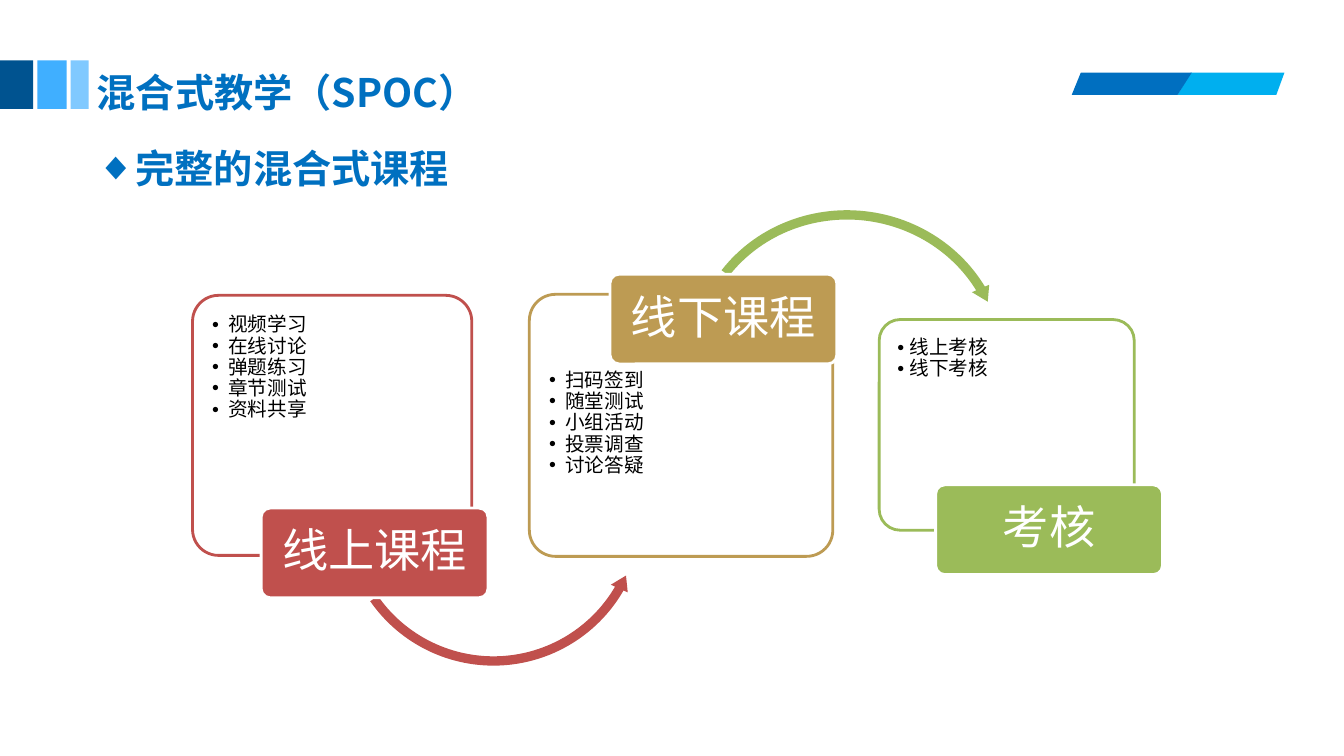
from lxml.etree import SubElement
from pptx import Presentation
from pptx.dml.color import RGBColor
from pptx.enum.shapes import MSO_SHAPE as Shape
from pptx.enum.text import MSO_ANCHOR as Anchor, MSO_AUTO_SIZE as AutoSize, PP_ALIGN as Align
from pptx.oxml.ns import qn
from pptx.util import Inches, Pt

FONT = "Noto Sans CJK SC"
WHITE = RGBColor(0xFF, 0xFF, 0xFF)
BLACK = RGBColor(0x00, 0x00, 0x00)
BLUE = RGBColor(0x00, 0x70, 0xC0)
BAND_BLUE = RGBColor(0x00, 0x6F, 0xC0)
BAND_CYAN = RGBColor(0x00, 0xAF, 0xEF)
NAVY = RGBColor(0x00, 0x53, 0x90)
SKY = RGBColor(0x40, 0xAF, 0xFF)
PALE = RGBColor(0x80, 0xC9, 0xFF)
RED = RGBColor(0xC0, 0x50, 0x4D)
GOLD = RGBColor(0xBD, 0x9B, 0x53)
GREEN = RGBColor(0x9B, 0xBB, 0x59)

HEADING = {"size": Pt(28), "bold": True}
LABEL = {"size": Pt(33), "bold": False}
ITEM = {"size": Pt(14), "bold": False}


class SlideBuilder:
    def __init__(self, slide):
        self.slide = slide

    def paint(self, shape, fill, line=None):
        shape.shadow.inherit = False
        shape.fill.solid()
        shape.fill.fore_color.rgb = fill
        if line is None:
            shape.line.fill.background()
        else:
            shape.line.color.rgb = line
            shape.line.width = Pt(2)

    def shape(self, kind, box, fill, line=None, adjustments=()):
        shape = self.slide.shapes.add_shape(kind, *map(Inches, box))
        self.paint(shape, fill, line)
        for index, value in enumerate(adjustments):
            shape.adjustments[index] = value
        return shape

    def band(self, points, fill):
        corners = [(Inches(x), Inches(y)) for x, y in points]
        builder = self.slide.shapes.build_freeform(*corners[0])
        builder.add_line_segments(corners[1:], close=True)
        self.paint(builder.convert_to_shape(), fill)

    def set_text(self, shape, lines, style, color, margins, anchor=Anchor.TOP,
                 align=Align.LEFT, spacing=1.0, bullet=None, indent=0):
        frame = shape.text_frame
        frame.text = "\n".join(lines)
        sides = ("margin_left", "margin_top", "margin_right", "margin_bottom")
        settings = dict(zip(sides, map(Inches, margins)))
        settings.update(word_wrap=True, auto_size=AutoSize.NONE, vertical_anchor=anchor)
        for name, value in settings.items():
            setattr(frame, name, value)
        for paragraph in frame.paragraphs:
            layout = {"alignment": align, "line_spacing": spacing,
                      "space_before": Pt(0), "space_after": Pt(0)}
            for name, value in layout.items():
                setattr(paragraph, name, value)
            if bullet:
                self.add_bullet(paragraph, bullet, indent)
            font = paragraph.runs[0].font
            for name, value in {**style, "name": FONT}.items():
                setattr(font, name, value)
            font.color.rgb = color
            SubElement(font._element, qn("a:ea"), typeface=FONT)

    def add_bullet(self, paragraph, bullet, indent):
        properties = paragraph._p.get_or_add_pPr()
        properties.set("marL", str(Inches(indent)))
        properties.set("indent", str(-Inches(indent)))
        SubElement(properties, qn("a:buFont"), typeface="Arial")
        SubElement(properties, qn("a:buChar"), char=bullet)

    def heading(self, placeholder, box, text, **options):
        for name, value in zip(("left", "top", "width", "height"), box):
            setattr(placeholder, name, Inches(value))
        self.set_text(placeholder, [text], HEADING, BLUE, (0.1, 0.05, 0.1, 0.05), **options)

    def card(self, box, items, color, top_margin, indent):
        frame = self.shape(Shape.ROUNDED_RECTANGLE, box, WHITE, color, [0.1])
        solid = frame._element.spPr.find(qn("a:solidFill"))
        SubElement(solid[0], qn("a:alpha"), val="90000")
        self.set_text(frame, items, ITEM, BLACK, (0.12, top_margin, 0.12, 0.12),
                      anchor=Anchor.TOP, spacing=0.9, bullet="•", indent=indent)

    def label(self, left, top, text, color):
        shape = self.shape(Shape.ROUNDED_RECTANGLE, (left, top, 2.25, 0.89),
                           color, WHITE, [0.1])
        self.set_text(shape, [text], LABEL, WHITE, (0.07, 0.05, 0.07, 0.05),
                      anchor=Anchor.MIDDLE, align=Align.CENTER, spacing=0.9)


def main():
    presentation = Presentation()
    presentation.slide_width = Inches(13.33)
    presentation.slide_height = Inches(7.5)
    slide = presentation.slides.add_slide(presentation.slide_layouts[1])
    builder = SlideBuilder(slide)

    builder.band([(11.81, 0.72), (11.68, 0.94), (12.66, 0.94), (12.74, 0.72)], BAND_CYAN)
    builder.band([(11.82, 0.72), (10.72, 0.72), (10.63, 0.94), (11.68, 0.94)], BAND_BLUE)
    for left, width, color in ((0.7, 0.18, PALE), (0.37, 0.29, SKY), (0, 0.33, NAVY)):
        builder.shape(Shape.RECTANGLE, (left, 0.6, width, 0.48), color)

    builder.card((1.91, 2.93, 2.77, 2.58),
                 ["视频学习", "在线讨论", "弹题练习", "章节测试", "资料共享"], RED, 0.12, 0.16)
    builder.shape(Shape.LEFT_CIRCULAR_ARROW, (3.36, 3.58, 3.07, 3.07), RED,
                  adjustments=(0.03, 3.46, 18.08, 87.11, 0.03))
    builder.label(2.59, 5.04, "线上课程", RED)

    builder.card((5.25, 2.92, 3.01, 2.6),
                 ["扫码签到", "随堂测试", "小组活动", "投票调查", "讨论答疑"], GOLD, 0.68, 0.16)
    arrow = builder.shape(Shape.CIRCULAR_ARROW, (6.8, 2.04, 3.23, 3.1), GREEN,
                          adjustments=(0.03, 3.41, 194.86, 125.78, 0.03))
    arrow.rotation = 6.2
    builder.label(6.05, 2.72, "线下课程", GOLD)

    builder.card((8.72, 3.17, 2.53, 2.09), ["线上考核", "线下考核"], GREEN, 0.12, 0.12)
    builder.label(9.28, 4.81, "考核", GREEN)

    title, body = slide.placeholders
    builder.heading(body, (0.86, 1.38, 3.73, 0.57), "完整的混合式课程",
                    bullet="◆", indent=0.38)
    builder.heading(title, (0.86, 0.53, 7.11, 0.62), "混合式教学（SPOC）", spacing=1.2)
    presentation.save("out.pptx")


if __name__ == "__main__":
    main()
